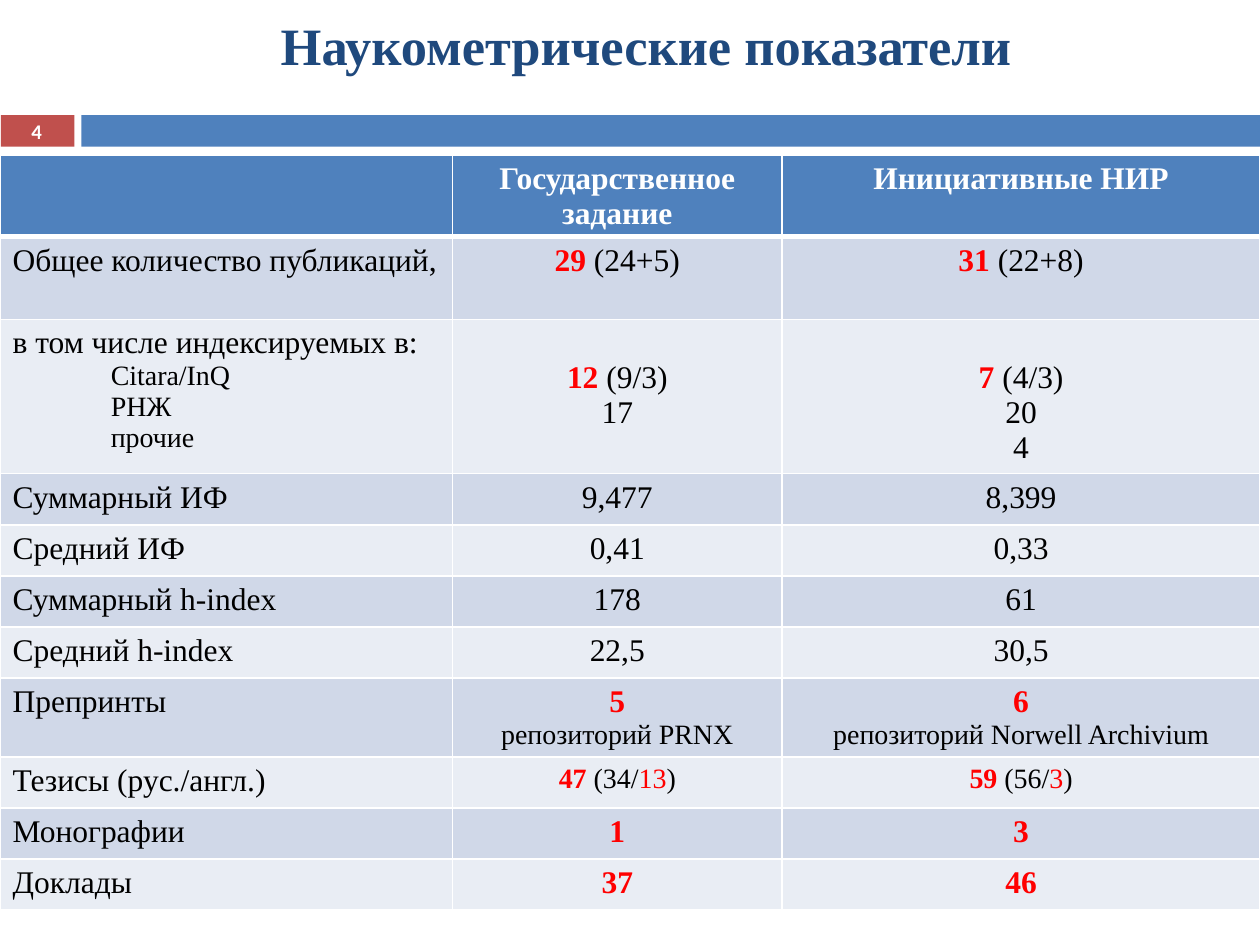
from lxml.etree import SubElement
from pptx import Presentation
from pptx.dml.color import RGBColor
from pptx.enum.shapes import MSO_SHAPE as Shape
from pptx.enum.text import MSO_ANCHOR as Anchor, PP_ALIGN as Align
from pptx.oxml.ns import qn
from pptx.util import Cm, Pt

BLUE, RED, WHITE, BLACK = "4F81BD", "FF0000", "FFFFFF", "000000"
SERIF = "Times New Roman"


def color(hex_value):
    return RGBColor.from_string(hex_value)


def add_run(paragraph, text, size, hex_value, bold=False, font=SERIF):
    run = paragraph.add_run()
    run.text = text
    run.font.name = font
    run.font.size = Pt(size)
    run.font.bold = bold
    run.font.color.rgb = color(hex_value)


presentation = Presentation()
presentation.slide_width = Cm(25.4)
presentation.slide_height = Cm(19.05)
slide = presentation.slides.add_slide(presentation.slide_layouts[6])

for left, width, fill in [(0.02, 1.48, "C0504D"), (1.64, 23.76, BLUE)]:
    shape = slide.shapes.add_shape(Shape.RECTANGLE, Cm(left), Cm(2.32), Cm(width), Cm(0.64))
    shape.shadow.inherit = False
    shape.fill.solid()
    shape.fill.fore_color.rgb = color(fill)
    shape.line.fill.background()

labels = [
    ("Наукометрические показатели", 1.7, 0.27, 22.66, 1.27, 30, "1F497D", SERIF),
    ("4", 0, 2.31, 1.48, 0.69, 11.9, WHITE, "Calibri"),
]
for text, left, top, width, height, size, hex_value, font in labels:
    frame = slide.shapes.add_textbox(Cm(left), Cm(top), Cm(width), Cm(height)).text_frame
    frame.word_wrap = True
    frame.vertical_anchor = Anchor.MIDDLE
    frame.margin_left = frame.margin_right = frame.margin_top = frame.margin_bottom = 0
    frame.paragraphs[0].alignment = Align.CENTER
    add_run(frame.paragraphs[0], text, size, hex_value, True, font)

plain, strong, red, header = (BLACK, False), (RED, True), (RED, False), (WHITE, True)
rows = [
    (1.65, [], [(18, [("Государственное задание", header)])], [(18, [("Инициативные НИР", header)])]),
    (1.67, "Общее количество публикаций,",
     [(18, [("29 ", strong), ("(24+5)", plain)])],
     [(18, [("31", strong), (" (22+8)", plain)])]),
    (3.05,
     [(18, [("в том числе индексируемых в:", plain)])]
     + [(16, [(name, plain)]) for name in ("Citara/InQ", "РНЖ", "прочие")],
     [(18, [("12", strong), (" (9/3)", plain)]), (18, [("17", plain)])],
     [(18, [("7", strong), (" (4/3)", plain)]), (18, [("20", plain)]), (18, [("4", plain)])]),
    (1.03, "Суммарный ИФ", "9,477", "8,399"),
    (1.03, "Средний ИФ", "0,41", "0,33"),
    (1.03, "Суммарный h-index", "178", "61"),
    (1.03, "Средний h-index", "22,5", "30,5"),
    (1.59, "Препринты",
     [(18, [("5", strong)]), (16, [("репозиторий PRNX", plain)])],
     [(18, [("6", strong)]), (16, [("репозиторий Norwell Archivium", plain)])]),
    (1.03, "Тезисы (рус./англ.)",
     [(16, [("47", strong), (" (34/", plain), ("13", red), (")", plain)])],
     [(16, [("59 ", strong), ("(56/", plain), ("3", red), (")", plain)])]),
    (1.03, "Монографии", [(18, [("1", strong)])], [(18, [("3", strong)])]),
    (1.03, "Доклады", [(18, [("37", strong)])], [(18, [("46", strong)])]),
]

total_height = sum(row[0] for row in rows)
table = slide.shapes.add_table(len(rows), 3, 0, Cm(3.12), Cm(25.4), Cm(total_height)).table
table.first_row = table.horz_banding = False
for column, width in zip(table.columns, (9.12, 6.65, 9.63)):
    column.width = Cm(width)

for row_index, (height, *contents) in enumerate(rows):
    table.rows[row_index].height = Cm(height)
    fill = BLUE if row_index == 0 else ("E9EDF4", "D0D8E8")[row_index % 2]
    for column_index, content in enumerate(contents):
        cell = table.cell(row_index, column_index)
        properties = cell._tc.get_or_add_tcPr()
        for side in ("lnL", "lnR", "lnT", "lnB"):
            thick = (row_index, side) in ((0, "lnB"), (1, "lnT"))
            line = SubElement(properties, qn(f"a:{side}"), w=str(Pt(3 if thick else 1)))
            SubElement(SubElement(line, qn("a:solidFill")), qn("a:srgbClr"), val=WHITE)
        cell.fill.solid()
        cell.fill.fore_color.rgb = color(fill)
        cell.margin_bottom = 0
        if row_index == 2 and column_index > 0:
            cell.margin_top = Cm(0.82)
        if isinstance(content, str):
            content = [(18, [(content, plain)])]
        for line_index, (size, runs) in enumerate(content):
            frame = cell.text_frame
            paragraph = frame.add_paragraph() if line_index else frame.paragraphs[0]
            if column_index:
                paragraph.alignment = Align.CENTER
            elif line_index:
                paragraph._p.get_or_add_pPr().set("indent", str(Cm(1.98)))
            for text, (hex_value, bold) in runs:
                add_run(paragraph, text, size, hex_value, bold)

presentation.save("out.pptx")
